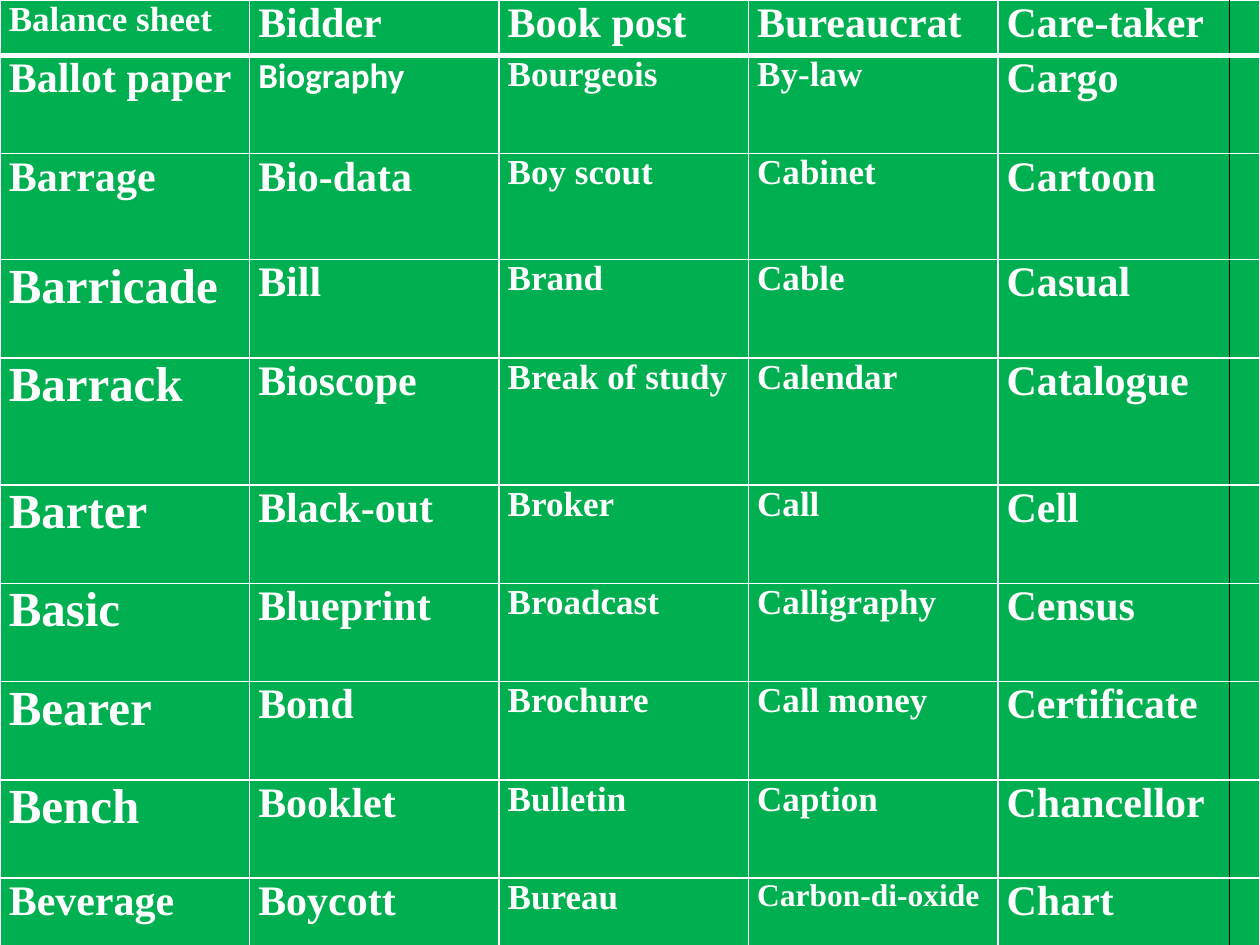
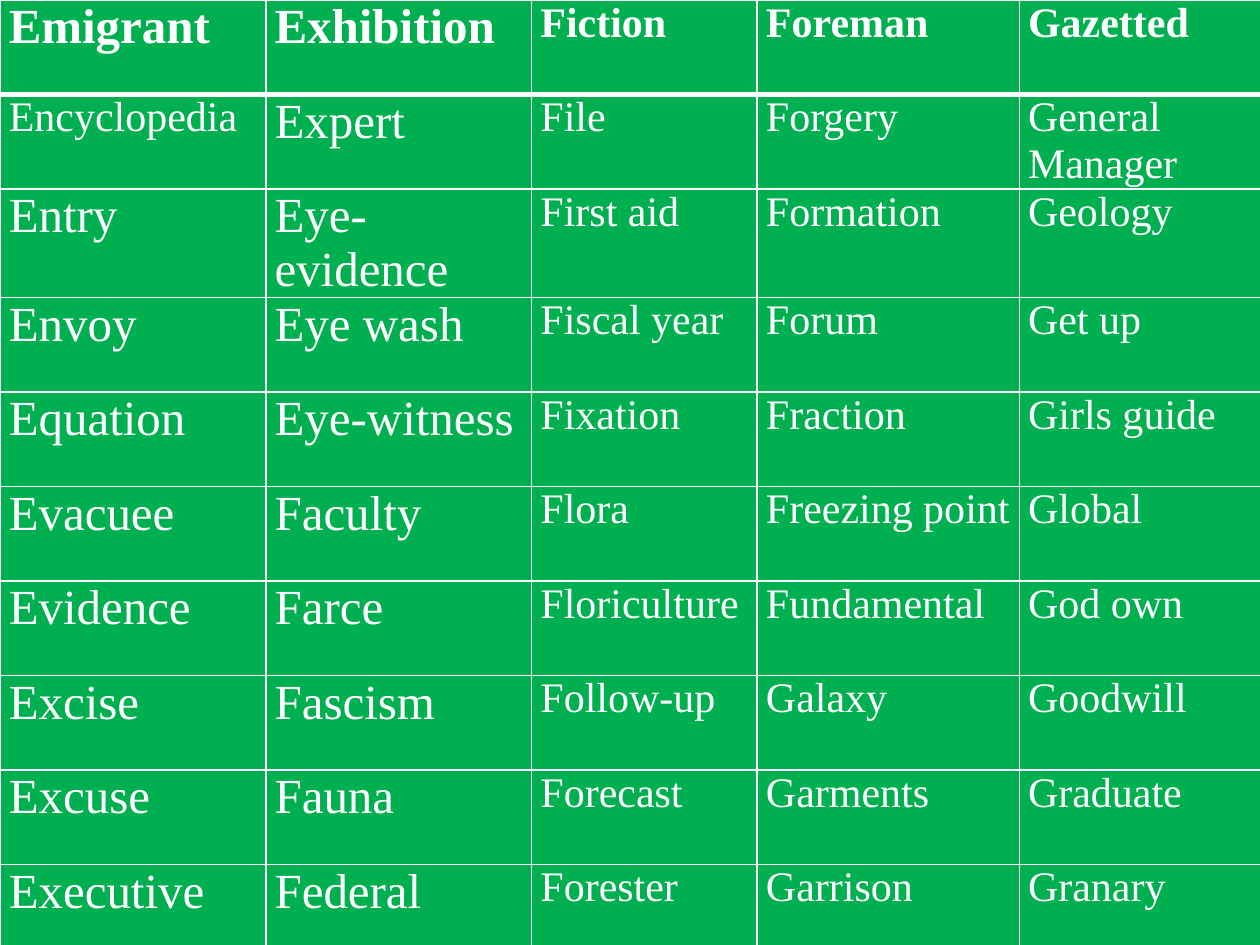
"""Build two slides of word tables."""
from dataclasses import dataclass, field
from typing import Optional

from lxml.etree import SubElement
from pptx import Presentation
from pptx.dml.color import RGBColor
from pptx.oxml.ns import qn
from pptx.util import Inches, Pt

GREEN = RGBColor(0x00, 0xB0, 0x50)
WHITE = RGBColor(0xFF, 0xFF, 0xFF)
BLACK = RGBColor(0x00, 0x00, 0x00)
SERIF = "Times New Roman"
SANS = "Calibri"
THIN, THICK = 1, 3


@dataclass(frozen=True)
class Grid:
    """Describe one table; odd maps a word to its own size."""

    words: list[tuple[str, ...]]
    cols: list[float]
    rows: list[float]
    sizes: list[int]
    odd: dict[str, int]
    sans: set[str] = field(default_factory=set)
    bold: bool = False
    split: Optional[int] = None


B_TO_C = Grid(
    words=[
        ("Balance sheet", "Bidder", "Book post", "Bureaucrat", "Care-taker"),
        ("Ballot paper", "Biography", "Bourgeois", "By-law", "Cargo"),
        ("Barrage", "Bio-data", "Boy scout", "Cabinet", "Cartoon"),
        ("Barricade", "Bill", "Brand", "Cable", "Casual"),
        ("Barrack", "Bioscope", "Break of study", "Calendar", "Catalogue"),
        ("Barter", "Black-out", "Broker", "Call", "Cell"),
        ("Basic", "Blueprint", "Broadcast", "Calligraphy", "Census"),
        ("Bearer", "Bond", "Brochure", "Call money", "Certificate"),
        ("Bench", "Booklet", "Bulletin", "Caption", "Chancellor"),
        ("Beverage", "Boycott", "Bureau", "Carbon-di-oxide", "Chart"),
    ],
    cols=[1.98] * 4 + [1.84, 0.23],
    rows=[0.44, 0.78, 0.84, 0.78, 1.01] + [0.78] * 5,
    sizes=[28, 24, 20, 20, 24],
    odd={"Balance sheet": 20, "Book post": 24, "Bureaucrat": 24,
         "Ballot paper": 24, "Biography": 20, "Barrage": 24,
         "Beverage": 24, "Carbon-di-oxide": 18},
    sans={"Biography"},
    bold=True,
    split=4,
)

E_TO_G = Grid(
    words=[
        ("Emigrant", "Exhibition", "Fiction", "Foreman", "Gazetted"),
        ("Encyclopedia", "Expert", "File", "Forgery", "General Manager"),
        ("Entry", "Eye-evidence", "First aid", "Formation", "Geology"),
        ("Envoy", "Eye wash", "Fiscal year", "Forum", "Get up"),
        ("Equation", "Eye-witness", "Fixation", "Fraction", "Girls guide"),
        ("Evacuee", "Faculty", "Flora", "Freezing point", "Global"),
        ("Evidence", "Farce", "Floriculture", "Fundamental", "God own"),
        ("Excise", "Fascism", "Follow-up", "Galaxy", "Goodwill"),
        ("Excuse", "Fauna", "Forecast", "Garments", "Graduate"),
        ("Executive", "Federal", "Forester", "Garrison", "Granary"),
    ],
    cols=[2.11, 2.11, 1.79, 2.08, 1.92],
    rows=[0.75] * 10,
    sizes=[28, 28, 24, 24, 24],
    odd={"Encyclopedia": 24},
)


def write(cell, text: str, *, size: int, font: str = SERIF,
          bold: bool = False, color: RGBColor = WHITE) -> None:
    """Put formatted text in a cell."""
    cell.margin_left = cell.margin_right = Inches(0.07)
    cell.margin_top = cell.margin_bottom = 0
    run = cell.text_frame.paragraphs[0].add_run()
    run.text = text
    run.font.size = Pt(size)
    run.font.name = font
    run.font.bold = bold
    run.font.color.rgb = color


def edge(cell, side: str, color: RGBColor, width: int) -> None:
    """Draw one border of a cell."""
    line = SubElement(cell._tc.get_or_add_tcPr(), qn(f"a:ln{side}"),
                      w=str(Pt(width)))
    fill = SubElement(line, qn("a:solidFill"))
    SubElement(fill, qn("a:srgbClr"), val=str(color))


def frame(cell, row: int, col: int, split: Optional[int]) -> None:
    """Draw all borders of a cell, then fill it."""
    after = split is not None and col == split + 1
    edge(cell, "L", BLACK if after else WHITE, THIN)
    edge(cell, "R", BLACK if col == split else WHITE, THIN)
    edge(cell, "T", WHITE, THICK if row == 1 else THIN)
    edge(cell, "B", WHITE, THICK if row == 0 else THIN)
    cell.fill.solid()
    cell.fill.fore_color.rgb = GREEN


def draw(deck, grid: Grid) -> None:
    """Add a black slide that holds one table."""
    slide = deck.slides.add_slide(deck.slide_layouts[6])
    slide.background.fill.solid()
    slide.background.fill.fore_color.rgb = BLACK
    table = slide.shapes.add_table(
        len(grid.rows), len(grid.cols), 0, 0,
        Inches(sum(grid.cols)), Inches(sum(grid.rows))).table
    table.horz_banding = False
    for col, width in zip(table.columns, grid.cols):
        col.width = Inches(width)
    for row, height in zip(table.rows, grid.rows):
        row.height = Inches(height)
    for r, words in enumerate(grid.words):
        for c in range(len(grid.cols)):
            frame(table.cell(r, c), r, c, grid.split)
        for c, word in enumerate(words):
            write(table.cell(r, c), word,
                  size=grid.odd.get(word, grid.sizes[c]),
                  font=SANS if word in grid.sans else SERIF,
                  bold=grid.bold or r == 0)


def main() -> None:
    """Build and save the deck."""
    deck = Presentation()
    deck.slide_width, deck.slide_height = Inches(10), Inches(7.5)
    for grid in (B_TO_C, E_TO_G):
        draw(deck, grid)
    deck.save("out.pptx")


if __name__ == "__main__":
    main()
